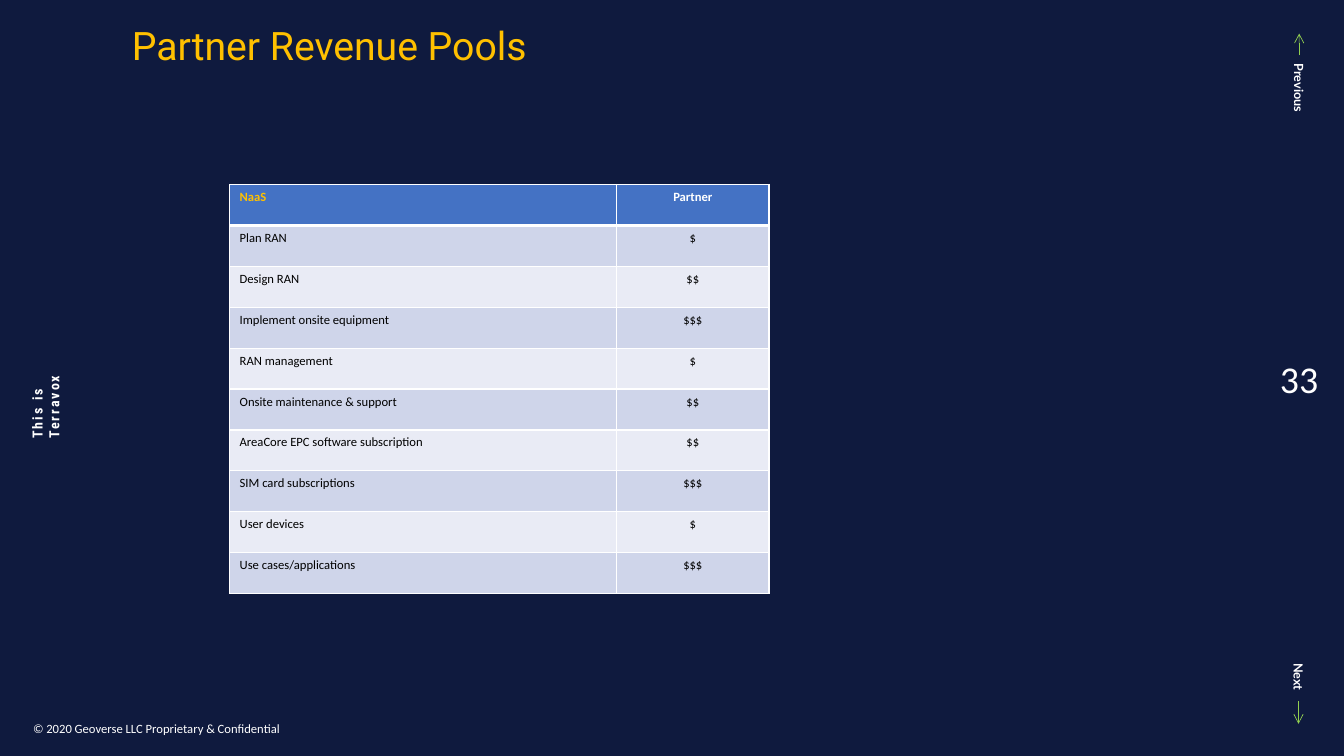
from lxml import etree
from pptx import Presentation
from pptx.dml.color import RGBColor
from pptx.enum import shapes, text
from pptx.oxml import ns
from pptx.util import Pt

COLORS = {
    "navy": "0F1A3E", "white": "FFFFFF", "black": "000000", "gold": "FFC000",
    "green": "92D050", "header": "4472C4", "odd": "CFD5EA", "even": "E9EBF5",
}
ALIGN = text.PP_ALIGN
ANCHOR = text.MSO_ANCHOR


def color(name):
    return RGBColor.from_string(COLORS[name])


def write(frame, words, size=9, font="Calibri", ink="white", bold=False,
          align=ALIGN.LEFT, anchor=ANCHOR.TOP, wrap=True, tracking=None):
    frame.word_wrap = wrap
    frame.vertical_anchor = anchor
    line = frame.paragraphs[0]
    line.alignment = align
    run = line.add_run()
    run.text = words
    run.font.size = Pt(size)
    run.font.name = font
    run.font.bold = bold
    run.font.color.rgb = color(ink)
    if tracking:
        run.font._element.set("spc", str(int(tracking * 100)))
    return line


deck = Presentation()
deck.slide_width, deck.slide_height = Pt(960), Pt(540)
slide = deck.slides.add_slide(deck.slide_layouts[5])
slide.background.fill.solid()
slide.background.fill.fore_color.rgb = color("navy")

heading = slide.shapes.title
heading.left, heading.top, heading.width, heading.height = Pt(87), Pt(9), Pt(828), Pt(50)
heading_line = write(heading.text_frame, "Partner Revenue Pools", size=28, font="Roboto",
                     ink="gold", anchor=ANCHOR.MIDDLE)
heading_line.line_spacing = 0.9

labels = [
    ("Previous", 903, 54.5, 50, 18, 90, dict(font="Lato", bold=True, wrap=False)),
    ("Next", 909.5, 475.5, 36, 18, 90, dict(font="Lato", bold=True, wrap=False)),
    ("This is Terravox", -3.5, 268.5, 72, 32, 270,
     dict(size=10, font="Roboto Condensed", bold=True, anchor=ANCHOR.MIDDLE, tracking=1.5)),
    ("33", 900, 204, 56, 132, 0,
     dict(size=27, align=ALIGN.CENTER, anchor=ANCHOR.MIDDLE, wrap=False)),
    ("© 2020 Geoverse LLC Proprietary & Confidential", 16.5, 500.5, 286, 29, 0,
     dict(anchor=ANCHOR.BOTTOM)),
]
for words, left, top, width, height, turn, style in labels:
    label = slide.shapes.add_textbox(Pt(left), Pt(top), Pt(width), Pt(height))
    label.rotation = turn
    write(label.text_frame, words, **style)

for x, start, end in [(928, 39.5, 24), (927.5, 501, 517)]:
    arrow = slide.shapes.add_connector(shapes.MSO_CONNECTOR.STRAIGHT,
                                       Pt(x), Pt(start), Pt(x), Pt(end))
    arrow.line.color.rgb = color("green")
    arrow.line.width = Pt(0.5)
    etree.SubElement(arrow.line._get_or_add_ln(), ns.qn("a:tailEnd"), type="arrow")
    etree.SubElement(arrow._element.spPr, ns.qn("a:effectLst"))

revenue_rows = [
    ("NaaS", "Partner"),
    ("Plan RAN", "$"),
    ("Design RAN", "$$"),
    ("Implement onsite equipment", "$$$"),
    ("RAN management", "$"),
    ("Onsite maintenance & support", "$$"),
    ("AreaCore EPC software subscription", "$$"),
    ("SIM card subscriptions", "$$$"),
    ("User devices", "$"),
    ("Use cases/applications", "$$$"),
]
ROW_HEIGHT = 29.23
pools = slide.shapes.add_table(len(revenue_rows), 2, Pt(164), Pt(131.75), Pt(385.25),
                               Pt(ROW_HEIGHT * len(revenue_rows))).table
for column, width in zip(pools.columns, (276.5, 108.75)):
    column.width = Pt(width)

for r, entries in enumerate(revenue_rows):
    pools.rows[r].height = Pt(ROW_HEIGHT)
    band = "header" if r == 0 else "odd" if r % 2 else "even"
    for c, words in enumerate(entries):
        cell = pools.cell(r, c)
        ink = "black" if r else ("gold", "white")[c]
        write(cell.text_frame, words, ink=ink, bold=r == 0,
              align=ALIGN.CENTER if c else ALIGN.LEFT)
        properties = cell._tc.get_or_add_tcPr()
        for side in ("lnL", "lnR", "lnT", "lnB"):
            under_header = (r, side) in ((0, "lnB"), (1, "lnT"))
            border = etree.SubElement(properties, ns.qn("a:" + side),
                                      w=str(Pt(3 if under_header else 1)))
            paint = etree.SubElement(border, ns.qn("a:solidFill"))
            etree.SubElement(paint, ns.qn("a:srgbClr"), val=COLORS["white"])
        cell.fill.solid()
        cell.fill.fore_color.rgb = color(band)

deck.save("out.pptx")
